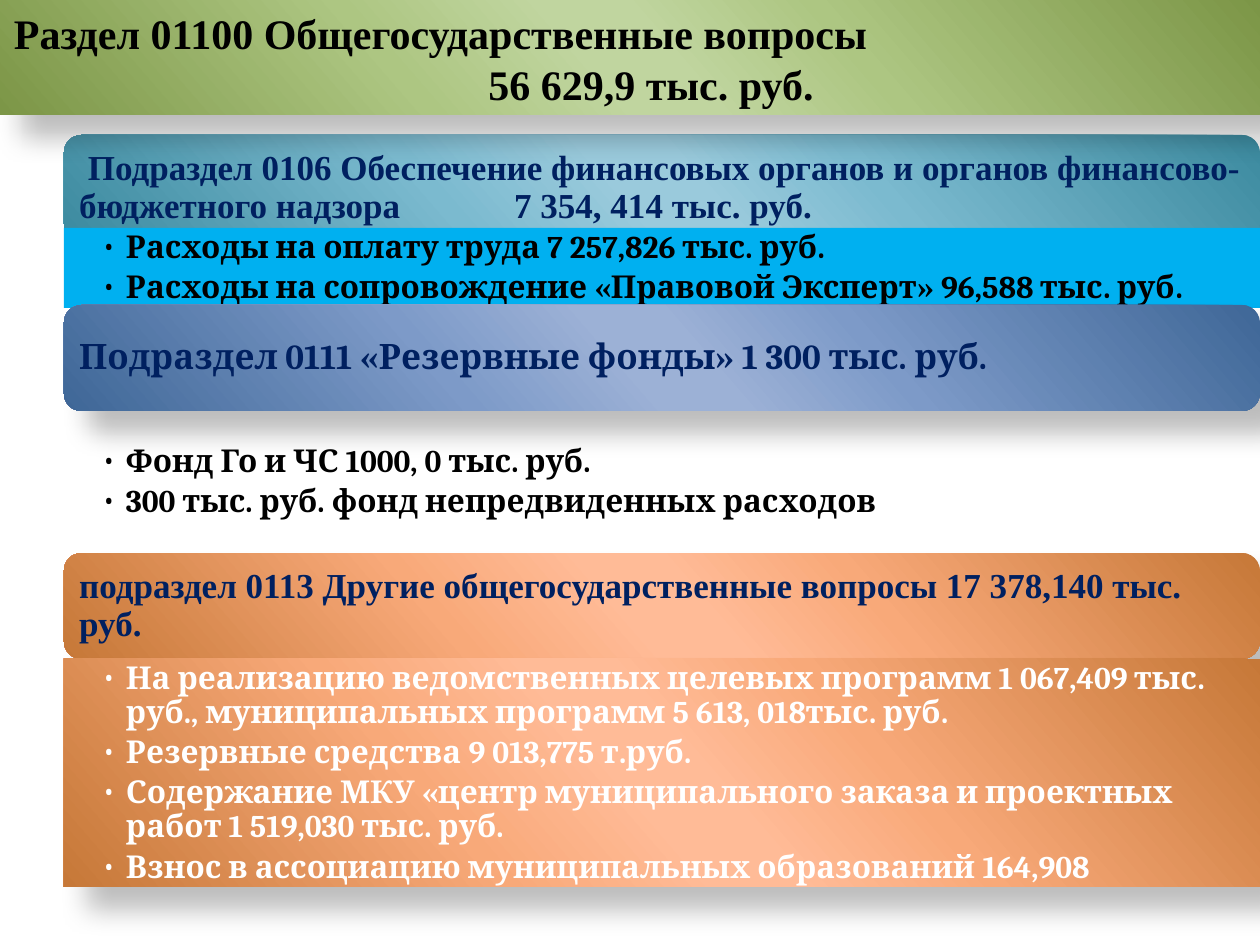
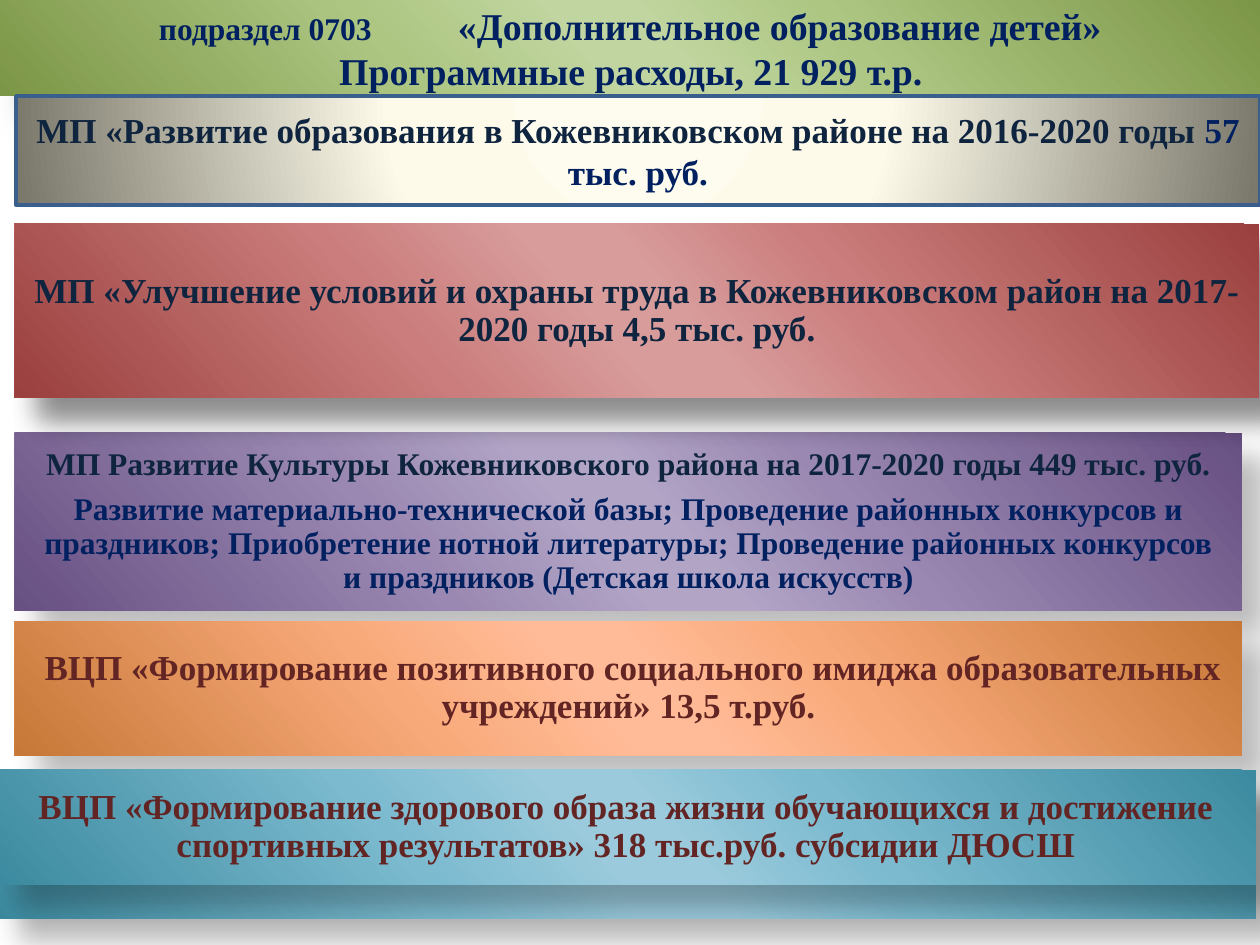
from pptx import Presentation
from pptx.dml.color import RGBColor
from pptx.enum.shapes import MSO_SHAPE
from pptx.enum.text import MSO_ANCHOR, PP_ALIGN
from pptx.oxml import parse_xml
from pptx.oxml.ns import nsdecls, qn
from pptx.util import Emu, Pt

COLORS = {
    "black": "000000", "white": "FFFFFF", "navy": "002060",
    "ink": "0F243E", "maroon": "632523", "sky": "00B0F0", "outline": "3A5F8C",
}
# Gradients run from edge through middle tone to centre and back
GRADIENTS = {
    "green": ("7C9647", "ADC682", "C0D59F"),
    "teal": ("3C8A9F", "7BBACF", "9ACADC"),
    "blue": ("3F6797", "7D9AC8", "9CB1D6"),
    "orange": ("C67838", "F8A979", "FFBB97"),
    "purple": ("675082", "9A88B2", "B1A4C5"),
    "red": ("9A403E", "CA7D7C", "D89C9B"),
}
CREAM_STOPS = ((0, "FEFCEE"), (40, "FDFAEA"), (100, "7B796B"))
SERIF, CAMBRIA = "Times New Roman", "Cambria"
LEFT, CENTER = PP_ALIGN.LEFT, PP_ALIGN.CENTER
SLIDE_W, SLIDE_H = 1260, 945


def px(n):
    return Emu(round(n * 914400 / 126))


def rgb(name):
    return RGBColor.from_string(COLORS[name])


def set_gradient(s, stops, direction):
    s.fill.gradient()
    old = s._element.spPr.find(qn("a:gradFill"))
    gs = "".join(f'<a:gs pos="{pos * 1000}"><a:srgbClr val="{color}"/></a:gs>'
                 for pos, color in stops)
    new = parse_xml(f'<a:gradFill {nsdecls("a")} rotWithShape="1">'
                    f"<a:gsLst>{gs}</a:gsLst>{direction}</a:gradFill>")
    old.getparent().replace(old, new)


def add_shadow(s):
    s._element.spPr.find(qn("a:effectLst")).append(parse_xml(
        f'<a:outerShdw {nsdecls("a")} blurRad="190500" dist="228600" '
        'dir="2700000" sy="90000" rotWithShape="0"><a:srgbClr val="000000">'
        '<a:alpha val="25500"/></a:srgbClr></a:outerShdw>'))


def add_band(slide, box, fill=None, rounded=False, insets=(10, 10, 10, 10),
             anchor=MSO_ANCHOR.MIDDLE):
    """Shadowed gradient, flat or unfilled box, ready for text."""
    kind = MSO_SHAPE.ROUNDED_RECTANGLE if rounded else MSO_SHAPE.RECTANGLE
    s = slide.shapes.add_shape(kind, *map(px, box))
    s.shadow.inherit = False
    s.line.fill.background()
    if fill in GRADIENTS:
        edge, tone, core = GRADIENTS[fill]
        stops = zip((0, 33, 47, 53, 68, 100), (edge, tone, core, core, tone, edge))
        set_gradient(s, stops, '<a:lin ang="8350000" scaled="1"/>')
        add_shadow(s)
    elif fill:
        s.fill.solid()
        s.fill.fore_color.rgb = rgb(fill)
    else:
        s.fill.background()
    tf = s.text_frame
    tf.word_wrap = True
    tf.vertical_anchor = anchor
    tf.margin_left, tf.margin_top, tf.margin_right, tf.margin_bottom = map(px, insets)
    return s


def add_para(tf, runs, align=CENTER, font=SERIF, spacing=0.9, after=0,
             indent=0, bullet=False, tabs=()):
    """Append a paragraph; runs are (text, size, colour)."""
    p = tf.paragraphs[0] if not tf.paragraphs[0].runs else tf.add_paragraph()
    pPr = p._p.get_or_add_pPr()
    if indent:
        pPr.set("marL", str(px(indent)))
    if bullet:
        pPr.set("indent", str(-px(indent)))
        pPr.append(parse_xml(f'<a:buFont {nsdecls("a")} typeface="{font}"/>'))
        pPr.append(parse_xml(f'<a:buChar {nsdecls("a")} char="•"/>'))
    if tabs:
        stops = "".join(f'<a:tab pos="{px(tab)}" algn="l"/>' for tab in tabs)
        pPr.append(parse_xml(f'<a:tabLst {nsdecls("a")}>{stops}</a:tabLst>'))
    p.alignment = align
    p.line_spacing = spacing
    p.space_after = Pt(after)
    for text, size, color in runs:
        r = p.add_run()
        r.text = text
        r.font.name, r.font.size, r.font.bold = font, Pt(size), True
        r.font.color.rgb = rgb(color)


def add_title(slide, height, spacing, lines):
    s = add_band(slide, (0, 0, SLIDE_W, height), "green", insets=(14, 6, 12, 6))
    for runs, layout in lines:
        add_para(s.text_frame, runs, spacing=spacing, **layout)


def add_section(slide, top, fill, heading, body, font=SERIF, tabs=()):
    """Rounded heading with a bulleted box at an offset below its top."""
    left, width = 64, SLIDE_W - 64
    s = add_band(slide, (left, top, width, 106), fill, rounded=True)
    add_para(s.text_frame, [(heading, 20, "navy")], LEFT, font, tabs=tabs)
    offset, height, body_fill, color, items = body
    s = add_band(slide, (left, top + offset, width, height), body_fill,
                 insets=(38, 3, 18, 3), anchor=MSO_ANCHOR.TOP)
    for item in items:
        add_para(s.text_frame, [(item, 18, color)], LEFT, CAMBRIA, after=3.6,
                 indent=24, bullet=True)


def add_cream_band(slide, box, runs):
    s = add_band(slide, box, insets=(13, 6, 13, 6))
    set_gradient(s, CREAM_STOPS,
                 '<a:path path="circle"><a:fillToRect l="50000" t="-80000" '
                 'r="50000" b="180000"/></a:path>')
    s.line.color.rgb = rgb("outline")
    s.line.width = Pt(2)
    add_para(s.text_frame, runs, spacing=1.0)


def build_general_issues(slide):
    add_section(slide, 135, "teal",
                " Подраздел 0106 Обеспечение финансовых органов и органов "
                "финансово-бюджетного надзора\t7 354, 414 тыс. руб.",
                (93, 80, "sky", "black",
                 ["Расходы на оплату труда 7 257,826 тыс. руб.",
                  "Расходы на сопровождение «Правовой Эксперт» 96,588 тыс. руб."]),
                tabs=[435])
    add_section(slide, 305, "blue",
                "Подраздел 0111 «Резервные фонды» 1 300 тыс. руб.",
                (137, 80, None, "black",
                 ["Фонд Го и ЧС 1000, 0 тыс. руб.",
                  "300 тыс. руб. фонд непредвиденных расходов"]),
                font=CAMBRIA)
    add_section(slide, 553, "orange",
                "подраздел 0113 Другие общегосударственные вопросы "
                "17 378,140 тыс. руб.",
                (106, 228, "orange", "white",
                 ["На реализацию ведомственных целевых программ 1 067,409 тыс. руб., "
                  "муниципальных программ 5 613, 018тыс. руб.",
                  "Резервные средства 9 013,775 т.руб.",
                  "Содержание МКУ «центр муниципального заказа и проектных работ "
                  "1 519,030 тыс. руб.",
                  "Взнос в ассоциацию муниципальных образований 164,908"]))
    add_title(slide, 115, 1.03, [
        ([("Раздел 01100 Общегосударственные вопросы", 24, "black")],
         {"align": LEFT}),
        ([("56 629,9 тыс. руб.", 24, "black")], {"indent": 40}),
    ])


def build_children_education(slide):
    # Culture and image programmes
    s = add_band(slide, (15, 433, 1227, 178), "purple", insets=(19, 19, 19, 19))
    for text, color in (
            ("МП Развитие Культуры Кожевниковского района на 2017-2020 годы "
             "449 тыс. руб.", "ink"),
            ("Развитие материально-технической базы; Проведение районных конкурсов "
             "и праздников; Приобретение нотной литературы; Проведение районных "
             "конкурсов и праздников (Детская школа искусств)", "navy")):
        add_para(s.text_frame, [(text, 18, color)], after=6.3)
    s = add_band(slide, (15, 621, 1227, 135), "orange")
    add_para(s.text_frame, [
        (" ", 20, "white"),
        ("ВЦП «Формирование позитивного социального имиджа образовательных "
         "учреждений» 13,5 т.руб.", 20, "maroon")])

    add_title(slide, 96, 1.0, [
        ([("\tподраздел 0703\t", 18, "navy"),
          ("«Дополнительное образование детей»", 21.6, "navy")],
         {"align": LEFT, "tabs": [145, 444]}),
        ([("Программные расходы, 21 929 т.р.", 21.6, "navy")], {}),
    ])

    # Labour safety programme: two stacked bands deepen the shadow
    for _ in range(2):
        s = add_band(slide, (15, 224, 1244, 174), "red")
    add_para(s.text_frame, [
        ("МП «Улучшение условий и охраны труда в Кожевниковском район на "
         "2017-2020 годы 4,5 тыс. руб.", 20, "ink")])

    # Healthy lifestyle programme on its taller backing band
    for height in (149, 115):
        s = add_band(slide, (-4, 770, SLIDE_W, height), "teal")
    add_para(s.text_frame, [
        ("ВЦП «Формирование здорового образа жизни обучающихся и достижение "
         "спортивных результатов» 318 тыс.руб. субсидии ДЮСШ", 20, "maroon")])

    add_cream_band(slide, (16, 96, 1244, 109), [
        ("МП «Развитие образования в Кожевниковском районе на 2016-2020 годы ",
         20, "ink"),
        ("57 тыс. руб.", 20, "navy")])


def main():
    prs = Presentation()
    prs.slide_width, prs.slide_height = px(SLIDE_W), px(SLIDE_H)
    for build in (build_general_issues, build_children_education):
        build(prs.slides.add_slide(prs.slide_layouts[6]))
    prs.save("out.pptx")


if __name__ == "__main__":
    main()
